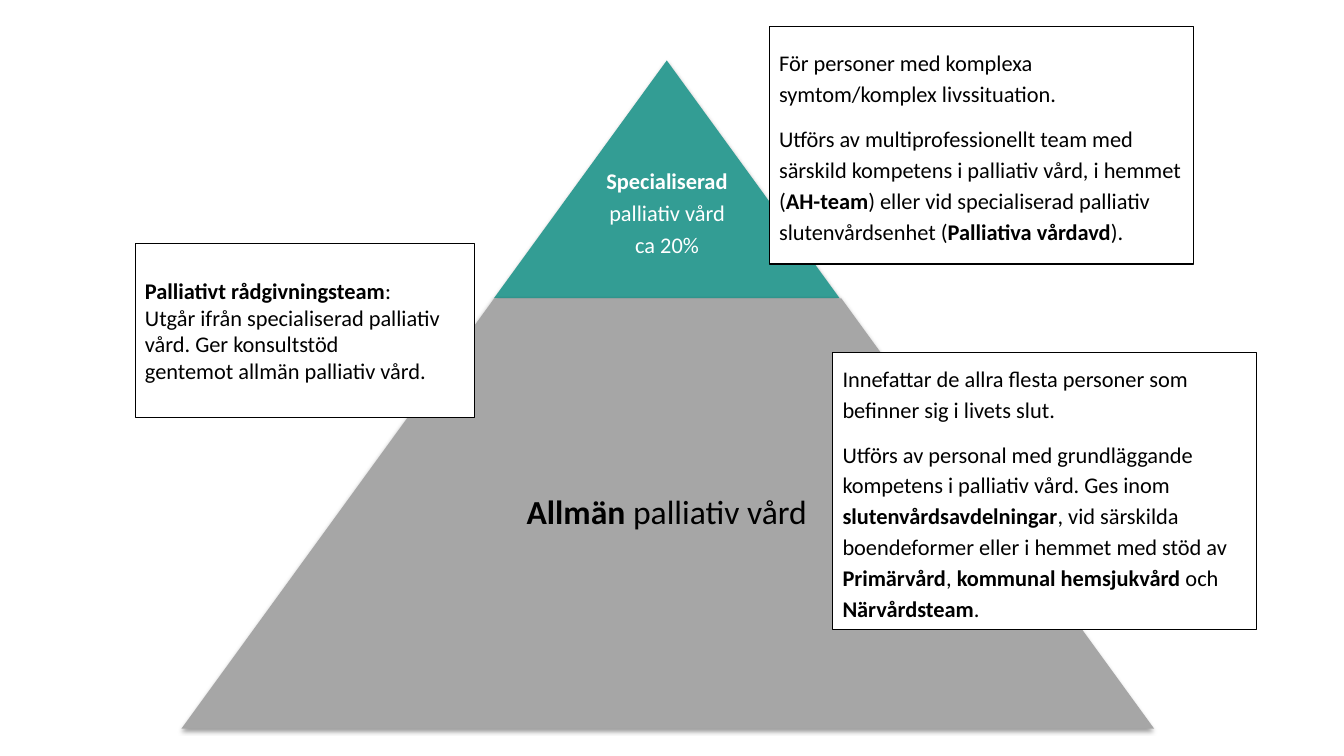
from dataclasses import dataclass

from lxml.etree import SubElement
from pptx import Presentation
from pptx.dml.color import RGBColor
from pptx.enum.shapes import MSO_SHAPE
from pptx.enum.text import MSO_ANCHOR, PP_ALIGN
from pptx.oxml.ns import qn
from pptx.shapes.autoshape import Shape
from pptx.slide import Slide
from pptx.util import Pt

TEAL = RGBColor(0x33, 0x9D, 0x94)
GREY = RGBColor(0xA6, 0xA6, 0xA6)
WHITE = RGBColor(0xFF, 0xFF, 0xFF)
BLACK = RGBColor(0x00, 0x00, 0x00)
FONT = "Calibri"
SLOPE = 0.727


@dataclass
class Area:
    left: float
    top: float
    width: float
    height: float

    def lengths(self) -> tuple[Pt, Pt, Pt, Pt]:
        return Pt(self.left), Pt(self.top), Pt(self.width), Pt(self.height)


@dataclass
class TextStyle:
    size: float = 16
    color: RGBColor = BLACK
    align: PP_ALIGN = PP_ALIGN.LEFT
    line_spacing: float = 1.0
    space_after: float = 0


@dataclass
class Level:
    area: Area
    fill: RGBColor
    text_area: Area
    paragraphs: list[str]
    style: TextStyle


@dataclass
class Note:
    area: Area
    paragraphs: list[str]
    style: TextStyle


# Text between ** marks is bold, and a newline is a line break
LEVELS = [
    Level(Area(352.8, 43.2, 247, 169.9), TEAL, Area(400, 111, 153, 84),
          ["**Specialiserad**", "palliativ vård", "ca 20%"],
          TextStyle(16, WHITE, PP_ALIGN.CENTER, 0.9, 5.6)),
    Level(Area(129.6, 213.1, 694.8, 307.4), GREY, Area(250.6, 213.1, 451.4, 307.4),
          ["**Allmän** palliativ vård"],
          TextStyle(24, BLACK, PP_ALIGN.CENTER, 0.9, 8.4)),
]

SPACED = TextStyle(line_spacing=1.15, space_after=10)
NOTES = [
    Note(Area(549.4, 18.7, 303.1, 169.9), [
        "För personer med komplexa symtom/komplex livssituation.",
        "Utförs av multiprofessionellt team med särskild kompetens i palliativ vård, "
        "i hemmet (**AH-team**) eller vid specialiserad palliativ slutenvårdsenhet "
        "(**Palliativa vårdavd**).",
    ], SPACED),
    Note(Area(594.7, 252, 303.1, 198), [
        "Innefattar de allra flesta personer som befinner sig i livets slut.",
        "Utförs av personal med grundläggande kompetens i palliativ vård. Ges inom "
        "**slutenvårdsavdelningar**, vid särskilda boendeformer eller i hemmet med "
        "stöd av **Primärvård**, **kommunal hemsjukvård** och **Närvårdsteam**.",
    ], SPACED),
    Note(Area(96.5, 174.2, 242.6, 123.8), [
        "**Palliativt rådgivningsteam**:",
        "Utgår ifrån specialiserad palliativ vård. Ger konsultstöd\n"
        "gentemot allmän palliativ vård.",
    ], TextStyle()),
]


def write_text(box: Shape, paragraphs: list[str], style: TextStyle) -> None:
    frame = box.text_frame
    frame.word_wrap = True
    frame.vertical_anchor = MSO_ANCHOR.MIDDLE
    for number, text in enumerate(paragraphs):
        para = frame.add_paragraph() if number else frame.paragraphs[0]
        para.alignment = style.align
        para.line_spacing = style.line_spacing
        para.space_after = Pt(style.space_after)
        para.font.name = FONT
        para.font.size = Pt(style.size)
        para.font.color.rgb = style.color
        for part, words in enumerate(text.split("**")):
            for line, line_text in enumerate(words.split("\n")):
                if line:
                    para.add_line_break()
                if line_text:
                    span = para.add_run()
                    span.text = line_text
                    span.font.bold = part % 2 == 1


def add_soft_shadow(shape: Shape) -> None:
    shape.shadow.inherit = False
    effects = shape.element.spPr.find(qn("a:effectLst"))
    shadow = SubElement(effects, qn("a:outerShdw"), blurRad=str(Pt(3.1)),
                        dist=str(Pt(1.6)), dir="5400000", rotWithShape="0")
    color = SubElement(shadow, qn("a:srgbClr"), val=str(BLACK))
    SubElement(color, qn("a:alpha"), val="38000")


def add_level(page: Slide, level: Level) -> None:
    block = page.shapes.add_shape(MSO_SHAPE.TRAPEZOID, *level.area.lengths())
    block.adjustments[0] = SLOPE
    block.fill.solid()
    block.fill.fore_color.rgb = level.fill
    block.line.fill.background()
    add_soft_shadow(block)
    label = page.shapes.add_textbox(*level.text_area.lengths())
    write_text(label, level.paragraphs, level.style)


def add_note(page: Slide, note: Note) -> None:
    box = page.shapes.add_shape(MSO_SHAPE.RECTANGLE, *note.area.lengths())
    box.shadow.inherit = False
    box.fill.solid()
    box.fill.fore_color.rgb = WHITE
    box.line.color.rgb = BLACK
    box.line.width = Pt(0.75)
    write_text(box, note.paragraphs, note.style)


def main() -> None:
    deck = Presentation()
    deck.slide_width, deck.slide_height = Pt(960), Pt(540)
    page = deck.slides.add_slide(deck.slide_layouts[6])

    # Pyramid of care levels
    for level in LEVELS:
        add_level(page, level)

    # Explanations beside the pyramid
    for note in NOTES:
        add_note(page, note)

    deck.save("out.pptx")


if __name__ == "__main__":
    main()
